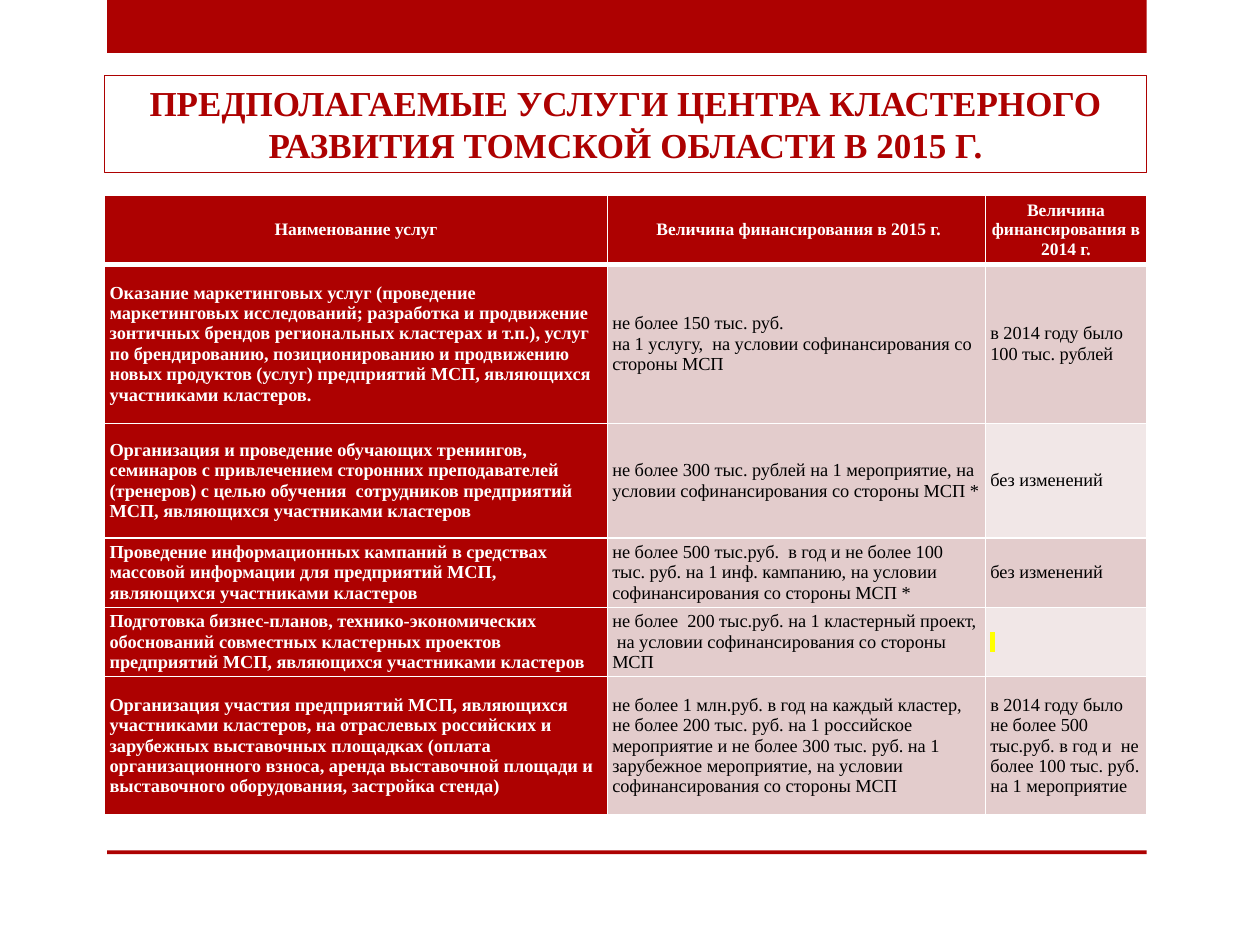
import copy

import lxml.etree
import pptx
import pptx.dml.color
import pptx.enum.shapes
import pptx.enum.text
import pptx.oxml
import pptx.oxml.ns
import pptx.util

Inches = pptx.util.Inches
Pt = pptx.util.Pt
qn = pptx.oxml.ns.qn
ALIGN = pptx.enum.text.PP_ALIGN
MIDDLE = pptx.enum.text.MSO_ANCHOR.MIDDLE

FONT = "Times New Roman"
COLORS = {
    "red": "AD0101",
    "white": "FFFFFF",
    "black": "000000",
    "band": "E3CCCC",
    "pale": "F1E7E7",
    "highlight": "FFFF00",
}
COLUMN_WIDTHS = [3.99, 3, 1.28]
ROW_HEIGHTS = [0.55, 1.26, 0.91, 0.55, 0.55, 1.1]
TITLE = "ПРЕДПОЛАГАЕМЫЕ УСЛУГИ ЦЕНТРА КЛАСТЕРНОГО РАЗВИТИЯ ТОМСКОЙ ОБЛАСТИ В 2015 Г."
SERVICES = [
    ("Наименование услуг",
     " Величина финансирования в 2015 г.",
     "Величина финансирования в 2014 г."),
    ("Оказание маркетинговых услуг (проведение маркетинговых исследований; разработка и продвижение "
     "зонтичных брендов региональных кластерах и т.п.), услуг по брендированию, позиционированию и "
     "продвижению новых продуктов (услуг) предприятий МСП, являющихся участниками кластеров.",
     "не более 150 тыс. руб. \nна 1 услугу,  на условии софинансирования со стороны МСП",
     "в 2014 году было 100 тыс. рублей"),
    ("Организация и проведение обучающих тренингов, семинаров с привлечением сторонних преподавателей "
     "(тренеров) с целью обучения  сотрудников предприятий МСП, являющихся участниками кластеров",
     "не более 300 тыс. рублей на 1 мероприятие, на условии софинансирования со стороны МСП *",
     "без изменений"),
    ("Проведение информационных кампаний в средствах массовой информации для предприятий МСП, "
     "являющихся участниками кластеров",
     "не более 500 тыс.руб.  в год и не более 100 тыс. руб. на 1 инф. кампанию, на условии "
     "софинансирования со стороны МСП *",
     "без изменений"),
    ("Подготовка бизнес-планов, технико-экономических обоснований совместных кластерных проектов "
     "предприятий МСП, являющихся участниками кластеров",
     "не более  200 тыс.руб. на 1 кластерный проект,  на условии софинансирования со стороны МСП",
     " "),
    ("Организация участия предприятий МСП, являющихся участниками кластеров, на отраслевых российских "
     "и зарубежных выставочных площадках (оплата организационного взноса, аренда выставочной площади "
     "и выставочного оборудования, застройка стенда)",
     "не более 1 млн.руб. в год на каждый кластер, не более 200 тыс. руб. на 1 российское мероприятие "
     "и не более 300 тыс. руб. на 1 зарубежное мероприятие, на условии софинансирования со стороны МСП",
     "в 2014 году было не более 500 тыс.руб. в год и  не более 100 тыс. руб. на 1 мероприятие"),
]


def rgb(name):
    return pptx.dml.color.RGBColor.from_string(COLORS[name])


def write(frame, text, size, color, bold, align):
    frame.word_wrap = True
    paragraph = frame.paragraphs[0]
    paragraph.text = text
    paragraph.alignment = align
    for run in paragraph.runs:
        run.font.name = FONT
        run.font.size = Pt(size)
        run.font.bold = bold
        run.font.color.rgb = rgb(color)
    for line_break in paragraph._p.findall(qn("a:br")):
        line_break.append(copy.deepcopy(paragraph.runs[0]._r.rPr))


def add_bar(slide, top, height):
    bar = slide.shapes.add_shape(
        pptx.enum.shapes.MSO_SHAPE.RECTANGLE,
        Inches(0.85), Inches(top), Inches(8.25), Inches(height))
    bar.shadow.inherit = False
    bar.fill.solid()
    bar.fill.fore_color.rgb = rgb("red")
    bar.line.fill.background()


def add_title(slide):
    title = slide.shapes.add_textbox(Inches(0.83), Inches(0.6), Inches(8.27), Inches(0.77))
    title.line.color.rgb = rgb("red")
    title.line.width = Pt(0.75)
    write(title.text_frame, TITLE, 20, "red", True, ALIGN.CENTER)
    title.text_frame.auto_size = pptx.enum.text.MSO_AUTO_SIZE.SHAPE_TO_FIT_TEXT


def set_borders(cell, row):
    widths = {"L": 1, "R": 1, "T": 3 if row == 1 else 1, "B": 3 if row == 0 else 1}
    properties = cell._tc.get_or_add_tcPr()
    for index, (side, width) in enumerate(widths.items()):
        border = lxml.etree.Element(qn(f"a:ln{side}"), w=str(Pt(width)))
        fill = lxml.etree.SubElement(border, qn("a:solidFill"))
        lxml.etree.SubElement(fill, qn("a:srgbClr"), val=COLORS["white"])
        properties.insert(index, border)


def highlight(run):
    mark = lxml.etree.Element(qn("a:highlight"))
    lxml.etree.SubElement(mark, qn("a:srgbClr"), val=COLORS["highlight"])
    run._r.rPr.find(qn("a:solidFill")).addnext(mark)


def cell_fill(row, column):
    if row == 0 or column == 0:
        return "red"
    return "pale" if column == 2 and row % 2 == 0 else "band"


def fill_cell(cell, text, row, column):
    cell.margin_left = cell.margin_right = Inches(0.04)
    cell.margin_top = cell.margin_bottom = 0
    cell.vertical_anchor = MIDDLE
    heading = row == 0 or column == 0
    write(cell.text_frame, text, 10 if row == 0 else 10.5,
          "white" if heading else "black", heading,
          ALIGN.CENTER if row == 0 else ALIGN.LEFT)
    cell.fill.solid()
    cell.fill.fore_color.rgb = rgb(cell_fill(row, column))
    set_borders(cell, row)


def add_services(slide):
    services = slide.shapes.add_table(
        len(ROW_HEIGHTS), len(COLUMN_WIDTHS), Inches(0.83), Inches(1.55),
        Inches(sum(COLUMN_WIDTHS)), Inches(sum(ROW_HEIGHTS))).table
    for column, width in zip(services.columns, COLUMN_WIDTHS):
        column.width = Inches(width)
    for row, height in zip(services.rows, ROW_HEIGHTS):
        row.height = Inches(height)
    for row, texts in enumerate(SERVICES):
        for column, text in enumerate(texts):
            fill_cell(services.cell(row, column), text, row, column)
    highlight(services.cell(4, 2).text_frame.paragraphs[0].runs[0])


def main():
    deck = pptx.Presentation()
    deck.slide_width = Inches(10)
    deck.slide_height = Inches(7.5)
    slide = deck.slides.add_slide(deck.slide_layouts[6])
    add_bar(slide, 0, 0.42)
    add_bar(slide, 6.75, 0.03)
    add_title(slide)
    add_services(slide)
    deck.save("out.pptx")


if __name__ == "__main__":
    main()
